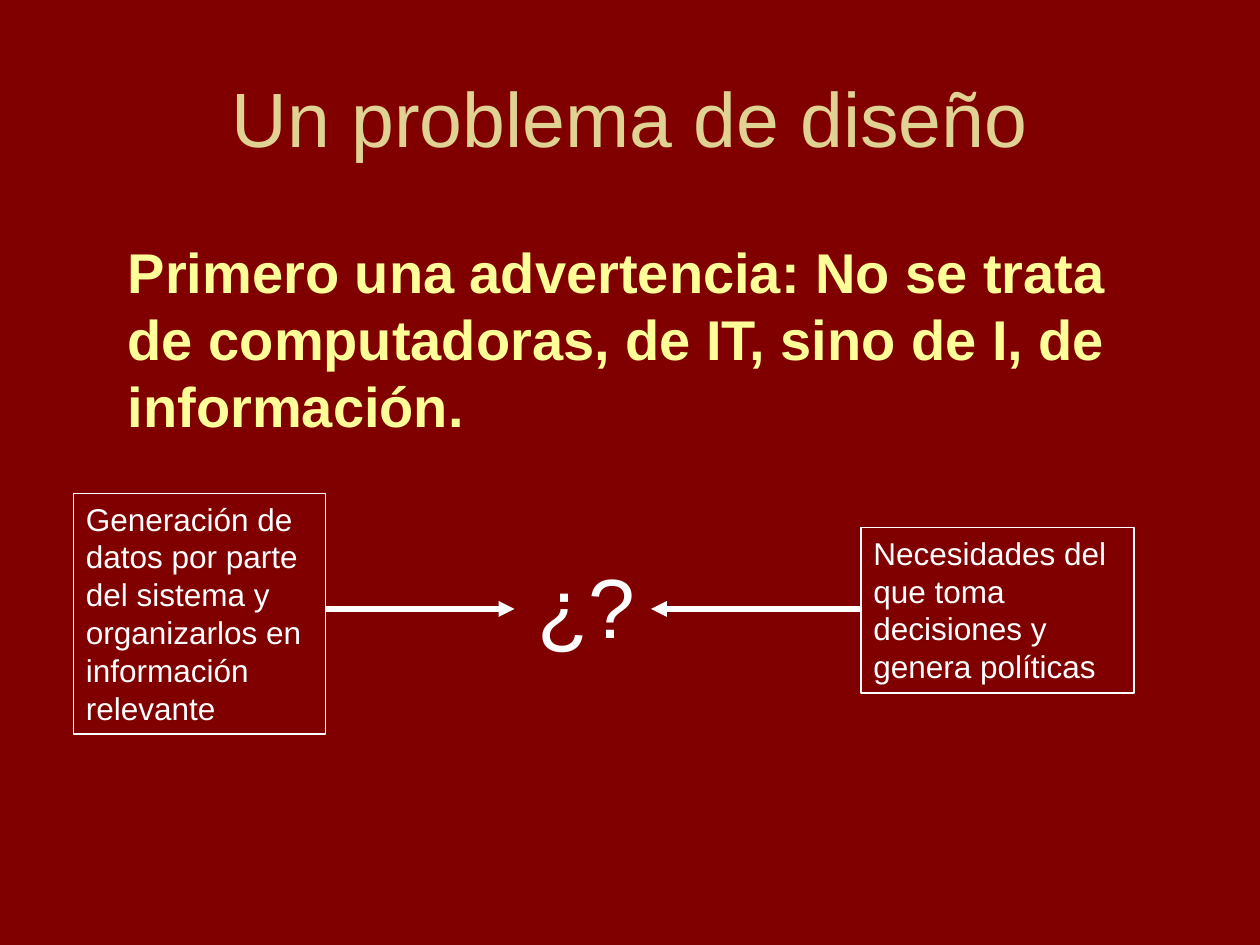
from pptx import Presentation
from pptx.dml.color import RGBColor
from pptx.enum.shapes import MSO_CONNECTOR, MSO_SHAPE
from pptx.enum.text import MSO_ANCHOR, MSO_AUTO_SIZE, PP_ALIGN
from pptx.oxml.ns import qn
from pptx.util import Pt
from lxml import etree

LEFT, CENTER = PP_ALIGN.LEFT, PP_ALIGN.CENTER
TOP, MIDDLE = MSO_ANCHOR.TOP, MSO_ANCHOR.MIDDLE
FIT_SHAPE = MSO_AUTO_SIZE.SHAPE_TO_FIT_TEXT
RECTANGLE = MSO_SHAPE.RECTANGLE
STRAIGHT = MSO_CONNECTOR.STRAIGHT


def color(hex_code):
    return RGBColor.from_string(hex_code)


class DesignSlide:
    FONT = "Arial"
    BACKGROUND = "800000"
    TITLE = "DFD293"
    WARNING = "FFFF99"
    INK = "FFFFFF"

    def __init__(self, slide):
        self.shapes = slide.shapes
        slide.background.fill.solid()
        slide.background.fill.fore_color.rgb = color(self.BACKGROUND)

    def set_text(self, shape, text, size, ink, bold=False, align=LEFT, anchor=TOP):
        frame = shape.text_frame
        frame.text = text
        frame.word_wrap = True
        frame.vertical_anchor = anchor
        paragraph = frame.paragraphs[0]
        paragraph.alignment = align
        font = paragraph.runs[0].font
        font.name, font.size, font.bold = self.FONT, Pt(size), bold
        font.color.rgb = color(ink)

    def title(self, text, left, top, width, height):
        label = self.shapes.add_textbox(Pt(left), Pt(top), Pt(width), Pt(height))
        self.set_text(label, text, 44, self.TITLE, align=CENTER, anchor=MIDDLE)

    def text(self, text, left, top, width, height, size, ink=INK, bold=False):
        label = self.shapes.add_textbox(Pt(left), Pt(top), Pt(width), Pt(height))
        self.set_text(label, text, size, ink, bold)
        label.text_frame.auto_size = FIT_SHAPE

    def box(self, text, left, top, width, height):
        outline = self.shapes.add_shape(
            RECTANGLE, Pt(left), Pt(top), Pt(width), Pt(height))
        outline.shadow.inherit = False
        outline.fill.background()
        outline.line.color.rgb = color(self.INK)
        outline.line.width = Pt(0.75)
        self.set_text(outline, text, 18, self.INK)
        outline.text_frame.auto_size = FIT_SHAPE

    def arrow(self, start, end, y):
        """Draw a horizontal arrow whose head is at end."""
        arrow = self.shapes.add_connector(STRAIGHT, Pt(start), Pt(y), Pt(end), Pt(y))
        arrow.line.color.rgb = color(self.INK)
        arrow.line.width = Pt(3)
        properties = arrow._element.spPr
        etree.SubElement(properties.get_or_add_ln(), qn("a:tailEnd"), type="triangle")
        etree.SubElement(properties, qn("a:effectLst"))


def main():
    deck = Presentation()
    deck.slide_width, deck.slide_height = Pt(720), Pt(540)
    design = DesignSlide(deck.slides.add_slide(deck.slide_layouts[6]))

    design.title("Un problema de diseño", 36, 21.6, 648, 90)
    design.text(
        "Primero una advertencia: No se trata de computadoras, de IT, "
        "sino de I, de información.",
        66, 132, 576, 122.4, 32, design.WARNING, bold=True)

    supply_left, supply_width, need_left = 42, 144, 492
    design.box(
        "Generación de datos por parte del sistema y organizarlos "
        "en información relevante",
        supply_left, 282, supply_width, 137.5)
    design.box(
        "Necesidades del que toma decisiones y genera políticas",
        need_left, 301.5, 156, 94.5)
    design.text("¿?", 300, 313.5, 72, 64.8, 48)

    arrow_y = 348
    design.arrow(supply_left + supply_width, 294, arrow_y)
    design.arrow(need_left, 372, arrow_y)

    deck.save("out.pptx")


if __name__ == "__main__":
    main()
